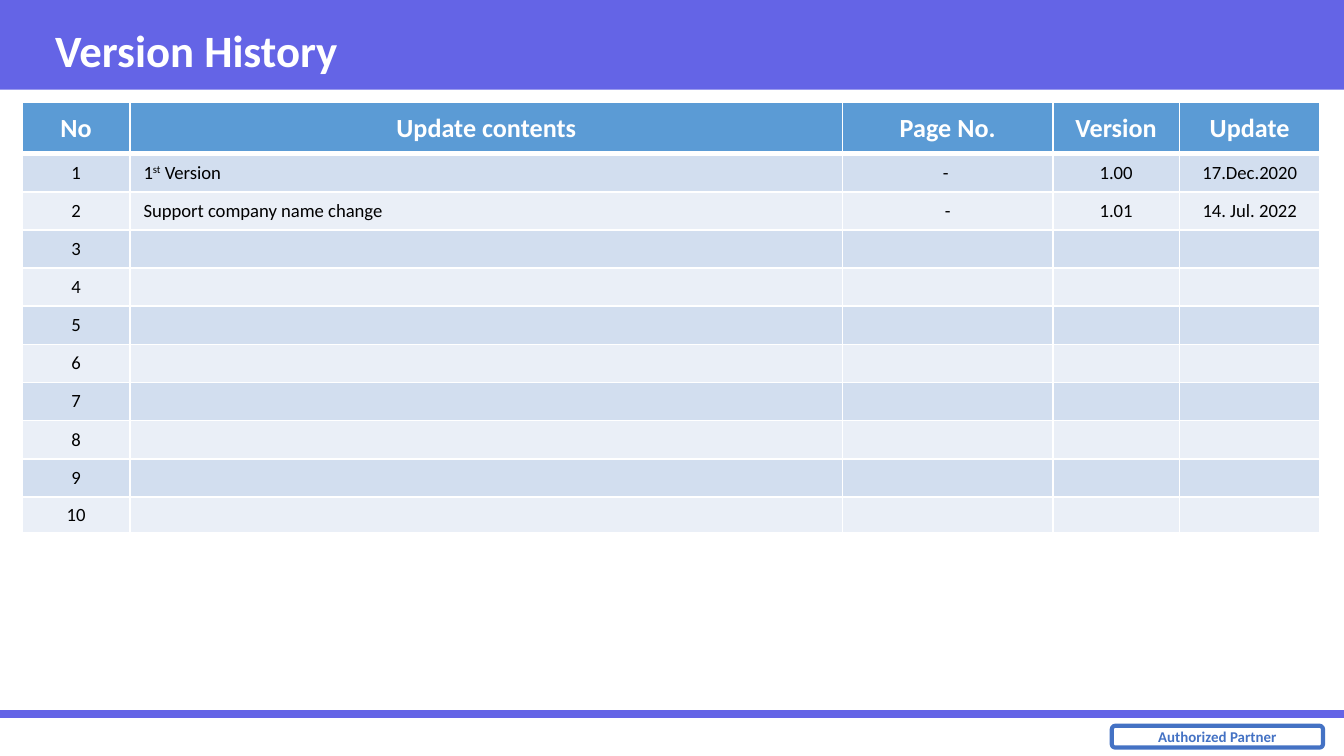
from lxml import etree
from pptx import Presentation
from pptx import util as u
from pptx.dml.color import RGBColor
from pptx.enum import shapes, text
from pptx.oxml import ns

COLORS = {
    "accent": "6464E6",
    "badge": "4472C4",
    "header": "5B9BD5",
    "odd": "D2DEEF",
    "even": "EAEFF7",
    "white": "FFFFFF",
    "black": "000000",
}
FORMATS = {
    "title": {"name": "Calibri", "size": u.Pt(24), "bold": True},
    "badge": {"name": "Calibri", "size": u.Pt(8), "bold": True},
    "header": {"name": "Calibri", "size": u.Pt(14), "bold": True},
    "body": {"name": "Calibri", "size": u.Pt(10), "bold": False},
}
CENTER, LEFT = text.PP_ALIGN.CENTER, text.PP_ALIGN.LEFT
SUPERSCRIPT = "30000"

HEADINGS = ["No", "Update contents", "Page No.", "Version", "Update"]
UPDATES = [
    [("1", "st", " Version"), "- ", "1.00", "17.Dec.2020"],
    ["Support company name change", "-", "1.01", "14. Jul. 2022"],
]
BODY_ROWS = 10
COLUMN_WIDTHS = [57.9, 381.7, 112.7, 67.8, 75.3]
ROW_HEIGHTS = [27.3] + [20.45] * (BODY_ROWS - 1) + [19]


def color(name):
    return RGBColor.from_string(COLORS[name])


class SlideBuilder:
    def __init__(self, slide):
        self.slide = slide

    def add_text(self, paragraph, parts, style, color_name, align):
        """Fill a paragraph; the second of several parts is raised."""
        paragraph.alignment = align
        for index, part in enumerate(parts):
            run = paragraph.add_run()
            run.text = part
            for attribute, value in FORMATS[style].items():
                setattr(run.font, attribute, value)
            run.font.color.rgb = color(color_name)
            if index == 1:
                run._r.get_or_add_rPr().set("baseline", SUPERSCRIPT)

    def bar(self, left, top, width, height):
        shape = self.slide.shapes.add_shape(
            shapes.MSO_SHAPE.RECTANGLE, *map(u.Pt, (left, top, width, height)))
        shape.shadow.inherit = False
        shape.fill.solid()
        shape.fill.fore_color.rgb = color("accent")
        shape.line.fill.background()

    def rule(self, left, right, y, weight):
        line = self.slide.shapes.add_connector(
            shapes.MSO_CONNECTOR.STRAIGHT, *map(u.Pt, (left, y, right, y)))
        line.line.color.rgb = color("accent")
        line.line.width = u.Pt(weight)
        etree.SubElement(line._element.spPr, ns.qn("a:effectLst"))

    def badge(self, left, top, width, height, label):
        shape = self.slide.shapes.add_shape(
            shapes.MSO_SHAPE.ROUNDED_RECTANGLE, *map(u.Pt, (left, top, width, height)))
        shape.shadow.inherit = False
        shape.fill.background()
        shape.line.color.rgb = color("badge")
        shape.line.width = u.Pt(2.25)
        frame = shape.text_frame
        frame.word_wrap = False
        frame.vertical_anchor = text.MSO_ANCHOR.MIDDLE
        self.add_text(frame.paragraphs[0], [label], "badge", "badge", CENTER)

    def title(self, left, top, width, height, label):
        shape = self.slide.shapes.title
        shape.left, shape.top, shape.width, shape.height = map(u.Pt, (left, top, width, height))
        frame = shape.text_frame
        frame.auto_size = text.MSO_AUTO_SIZE.NONE
        frame.vertical_anchor = text.MSO_ANCHOR.MIDDLE
        self.add_text(frame.paragraphs[0], [label], "title", "white", LEFT)
        # Bring the title in front of the bar
        self.slide.shapes.element.append(shape.element)

    def borders(self, cell, weights):
        properties = cell._tc.get_or_add_tcPr()
        for side, weight in weights.items():
            line = etree.SubElement(properties, ns.qn(f"a:ln{side}"), w=str(u.Pt(weight)))
            fill = etree.SubElement(line, ns.qn("a:solidFill"))
            etree.SubElement(fill, ns.qn("a:srgbClr"), val=COLORS["white"])

    def cell(self, cell, content, row, column):
        # Thick rule between the header and the body
        self.borders(cell, {"L": 1, "R": 1, "T": 3 if row == 1 else 1, "B": 3 if row == 0 else 1})
        cell.fill.solid()
        cell.fill.fore_color.rgb = color("header" if row == 0 else "odd" if row % 2 else "even")
        cell.vertical_anchor = text.MSO_ANCHOR.MIDDLE
        paragraph = cell.text_frame.paragraphs[0]
        if content:
            style, ink = ("header", "white") if row == 0 else ("body", "black")
            parts = content if isinstance(content, tuple) else [content]
            self.add_text(paragraph, parts, style, ink, LEFT if row and column == 1 else CENTER)
        else:
            # Keep empty rows as low as the filled ones
            size = str(int(FORMATS["body"]["size"].pt * 100))
            etree.SubElement(paragraph._p, ns.qn("a:endParaRPr"), sz=size)

    def table(self, left, top, rows):
        frame = self.slide.shapes.add_table(
            len(rows), len(COLUMN_WIDTHS), u.Pt(left), u.Pt(top),
            u.Pt(sum(COLUMN_WIDTHS)), u.Pt(sum(ROW_HEIGHTS)))
        table = frame.table
        for column, width in zip(table.columns, COLUMN_WIDTHS):
            column.width = u.Pt(width)
        for row, height in zip(table.rows, ROW_HEIGHTS):
            row.height = u.Pt(height)
        for row, contents in enumerate(rows):
            for column, content in enumerate(contents):
                self.cell(table.cell(row, column), content, row, column)


def main():
    presentation = Presentation()
    presentation.slide_width, presentation.slide_height = u.Pt(720), u.Pt(405)
    builder = SlideBuilder(presentation.slides.add_slide(presentation.slide_layouts[5]))

    # Header bar and footer
    builder.bar(0, 0, 720, 48)
    builder.rule(0, 720, 382.5, 4.5)
    builder.badge(595.6, 388.8, 113.2, 11.7, "Authorized Partner")

    # Title
    builder.title(22.3, 5.8, 666.7, 41.8, "Version History")

    # Version table, numbered, with empty rows for later updates
    empty = [""] * (len(HEADINGS) - 1)
    updates = UPDATES + [empty] * (BODY_ROWS - len(UPDATES))
    rows = [[str(number), *update] for number, update in enumerate(updates, 1)]
    builder.table(11.8, 55, [HEADINGS] + rows)

    presentation.save("out.pptx")


if __name__ == "__main__":
    main()
